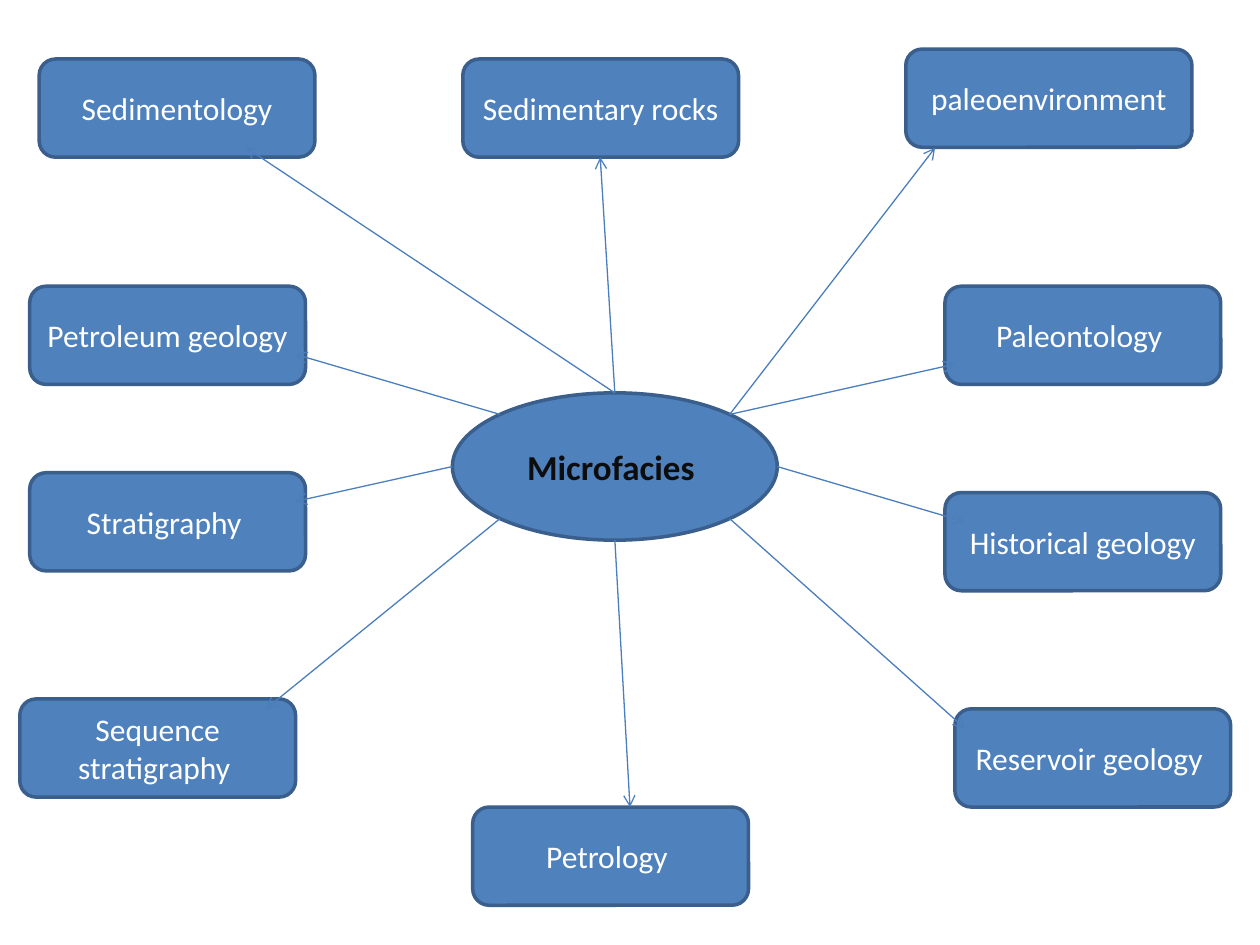
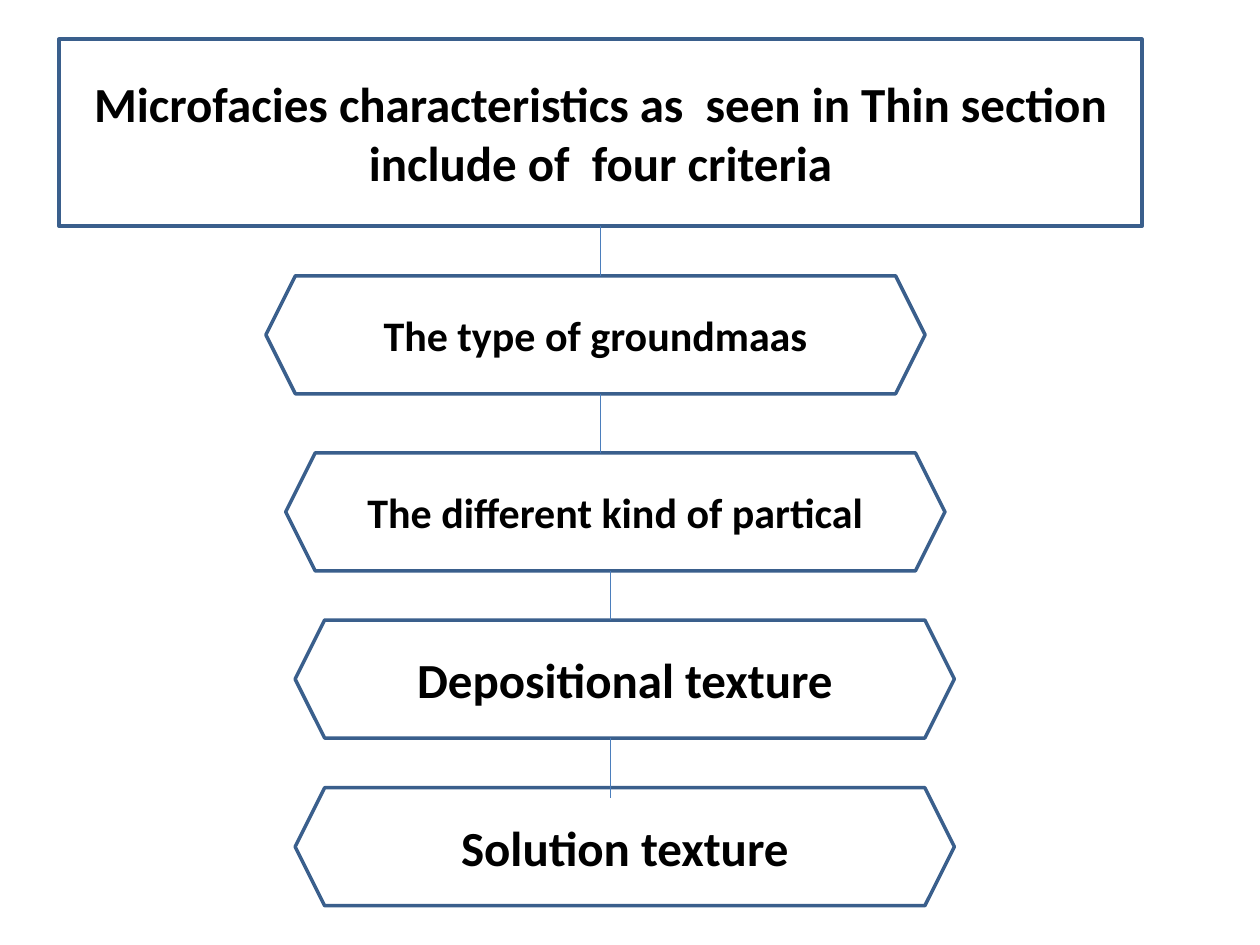
from dataclasses import dataclass
from math import cos, radians, sin

from lxml.etree import SubElement
from pptx import Presentation
from pptx.dml.color import RGBColor
from pptx.enum.shapes import MSO_CONNECTOR as Connector, MSO_SHAPE as Preset
from pptx.enum.text import MSO_ANCHOR as Anchor, MSO_AUTO_SIZE as AutoSize, PP_ALIGN as Align
from pptx.oxml.ns import qn
from pptx.util import Cm, Pt

# Shared look
FONT = "Calibri"
BLUE = RGBColor(0x4F, 0x81, 0xBD)
BORDER = RGBColor(0x3A, 0x5F, 0x8C)
LINK = RGBColor(0x4B, 0x7E, 0xBC)
WHITE = RGBColor(0xFF, 0xFF, 0xFF)
BLACK = RGBColor(0, 0, 0)
NEAR_BLACK = RGBColor(0x0D, 0x0D, 0x0D)
TITLE_ONLY, BLANK = 5, 6


@dataclass(frozen=True)
class Area:
    """Left, top, width and height in centimetres."""
    left: float
    top: float
    width: float
    height: float

    @property
    def bottom(self) -> float:
        return self.top + self.height

    def ellipse_point(self, degrees: float) -> tuple[float, float]:
        """Point on the inscribed ellipse, clockwise from the right."""
        angle = radians(degrees)
        return (self.left + self.width / 2 * (1 + cos(angle)),
                self.top + self.height / 2 * (1 + sin(angle)))


@dataclass(frozen=True)
class Field:
    """A field related to microfacies, with its arrow from the hub."""
    name: str
    left: float
    top: float
    hub_angle: float
    tip: tuple[float, float]
    width: float = 5.56


@dataclass(frozen=True)
class Criterion:
    """A criterion, with the line that comes down to it."""
    name: str
    left: float
    top: float
    size: int
    link_x: float
    overlap: float = 0


HUB = Area(9.12, 7.92, 6.55, 2.97)
FIELD_HEIGHT = 1.98
FIELDS = [
    Field("Sedimentology", 0.79, 1.19, 270, (4.95, 2.97)),
    Field("Petroleum geology", 0.6, 5.77, 225, (5.95, 7.14)),
    Field("Historical geology", 19.05, 9.93, 0, (19.45, 10.52)),
    Field("Sedimentary rocks", 9.33, 1.19, 270, (12.1, 3.17)),
    Field("Stratigraphy ", 0.6, 9.53, 180, (5.95, 10.11)),
    Field("Sequence stratigraphy ", 0.4, 14.09, 135, (5.36, 14.29)),
    Field("Petrology ", 9.53, 16.27, 90, (12.7, 16.27)),
    Field("Reservoir geology ", 19.25, 14.29, 45, (19.45, 14.68)),
    Field("Paleontology ", 19.05, 5.77, 315, (19.25, 7.34)),
    Field("paleoenvironment", 18.26, 0.99, 315, (18.85, 2.98), 5.77),
]

HEADING = Area(1.19, 0.79, 21.83, 3.77)
CRITERION_WIDTH, CRITERION_HEIGHT = 13.29, 2.38
CRITERIA = [
    Criterion("The type of groundmaas", 5.36, 5.56, 24, 12.1),
    Criterion("The different kind of partical", 5.76, 9.13, 24, 12.1),
    Criterion("Depositional texture", 5.95, 12.5, 28, 12.3),
    Criterion("Solution texture", 5.95, 15.88, 28, 12.3, 0.2),
]


def write(box, text: str, size: int, color: RGBColor, bold: bool) -> None:
    frame = box.text_frame
    frame.word_wrap = True
    frame.auto_size = AutoSize.NONE
    frame.vertical_anchor = Anchor.MIDDLE
    frame.text = text
    para = frame.paragraphs[0]
    para.alignment = Align.CENTER
    for span in para.runs:
        span.font.name = FONT
        span.font.size = Pt(size)
        span.font.bold = bold
        span.font.color.rgb = color


def outline(box) -> None:
    box.line.color.rgb = BORDER
    box.line.width = Pt(2)


def add_box(page, preset: Preset, area: Area, text: str, size: int,
            color: RGBColor, bold: bool = True, fill: RGBColor | None = None) -> None:
    box = page.shapes.add_shape(preset, Cm(area.left), Cm(area.top),
                                Cm(area.width), Cm(area.height))
    box.shadow.inherit = False
    if fill is None:
        box.fill.background()
    else:
        box.fill.solid()
        box.fill.fore_color.rgb = fill
    outline(box)
    write(box, text, size, color, bold)


def add_link(page, start: tuple[float, float], end: tuple[float, float],
             arrow: bool = False) -> None:
    link = page.shapes.add_connector(Connector.STRAIGHT, Cm(start[0]), Cm(start[1]),
                                     Cm(end[0]), Cm(end[1]))
    link.line.color.rgb = LINK
    link.line.width = Pt(0.75)
    properties = link._element.spPr
    if arrow:
        SubElement(properties.find(qn("a:ln")), qn("a:tailEnd"), type="arrow")
    SubElement(properties, qn("a:effectLst"))


def add_heading(page, area: Area, text: str) -> None:
    """Title placeholder with a rounded outline."""
    title = page.shapes.title
    title.left, title.top = Cm(area.left), Cm(area.top)
    title.width, title.height = Cm(area.width), Cm(area.height)
    geometry = SubElement(title._element.spPr, qn("a:prstGeom"), prst="roundRect")
    SubElement(geometry, qn("a:avLst"))
    outline(title)
    write(title, text, 28, BLACK, True)


def build_fields_page(deck) -> None:
    page = deck.slides.add_slide(deck.slide_layouts[BLANK])
    add_box(page, Preset.OVAL, HUB, "Microfacies ", 20, NEAR_BLACK, fill=BLUE)
    for field in FIELDS:
        area = Area(field.left, field.top, field.width, FIELD_HEIGHT)
        add_box(page, Preset.ROUNDED_RECTANGLE, area, field.name, 18, WHITE,
                bold=False, fill=BLUE)
    # Arrows lie above all boxes
    for field in FIELDS:
        add_link(page, HUB.ellipse_point(field.hub_angle), field.tip, arrow=True)


def build_criteria_page(deck) -> None:
    page = deck.slides.add_slide(deck.slide_layouts[TITLE_ONLY])
    add_heading(page, HEADING, "Microfacies characteristics as  seen in Thin section "
                               "include of  four criteria")
    above = HEADING
    for criterion in CRITERIA:
        area = Area(criterion.left, criterion.top, CRITERION_WIDTH, CRITERION_HEIGHT)
        add_box(page, Preset.HEXAGON, area, criterion.name, criterion.size, BLACK)
        add_link(page, (criterion.link_x, above.bottom),
                 (criterion.link_x, area.top + criterion.overlap))
        above = area


def main() -> None:
    deck = Presentation()
    deck.slide_width, deck.slide_height = Cm(25.4), Cm(19.05)
    build_fields_page(deck)
    build_criteria_page(deck)
    deck.save("out.pptx")


if __name__ == "__main__":
    main()
